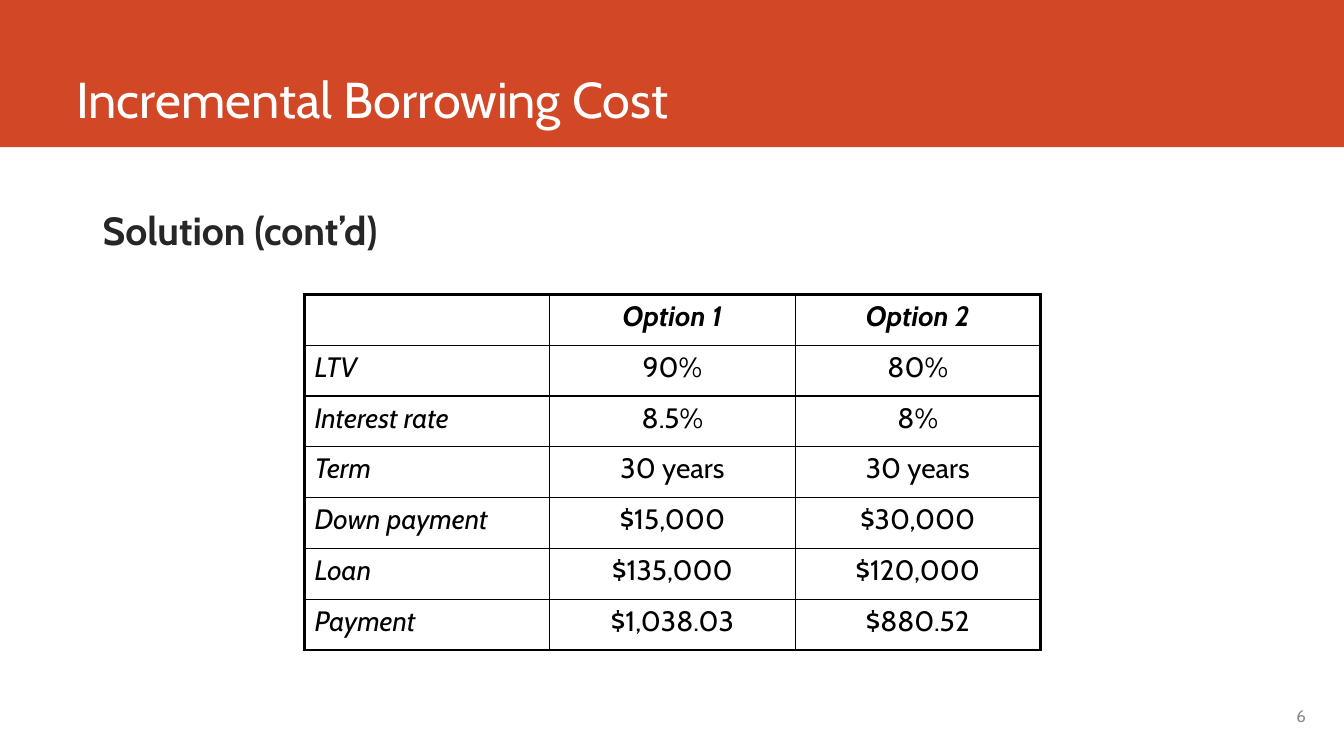
from dataclasses import dataclass

from lxml import etree
from pptx import Presentation
from pptx import util as u
from pptx.dml.color import RGBColor
from pptx.enum import shapes, text
from pptx.oxml.ns import qn

FONT = "Cabin"
BLACK = "000000"
THIN, THICK = 1, 2.25
ROW_HEIGHT = 3.53 / 7
COLUMN_WIDTH = 7.3 / 3

LOAN_ROWS = [
    ("", "Option 1", "Option 2"),
    ("LTV", "90%", "80%"),
    ("Interest rate", "8.5%", "8%"),
    ("Term", "30 years", "30 years"),
    ("Down payment", "$15,000", "$30,000"),
    ("Loan", "$135,000", "$120,000"),
    ("Payment", "$1,038.03", "$880.52"),
]


@dataclass
class Style:
    size: float
    color: str
    bold: bool = False
    italic: bool = False
    align: text.PP_ALIGN = text.PP_ALIGN.LEFT
    before: float = 0
    after: float = 0


@dataclass
class Label:
    words: str
    left: float
    top: float
    width: float
    height: float
    anchor: text.MSO_ANCHOR
    style: Style


LABELS = [
    Label("Incremental Borrowing Cost", 0.66, 0, 11.76, 1.32,
          text.MSO_ANCHOR.BOTTOM, Style(36, "FFFFFF")),
    Label("Solution (cont’d)", 0.92, 2, 11.5, 4.82,
          text.MSO_ANCHOR.TOP, Style(28, "262626", bold=True, before=6, after=6)),
    Label("6", 9.47, 6.9, 3.58, 0.4,
          text.MSO_ANCHOR.MIDDLE, Style(12, "8C8C8C", align=text.PP_ALIGN.RIGHT)),
]


def rgb(color: str) -> RGBColor:
    return RGBColor.from_string(color)


def write(frame, words: str, style: Style) -> None:
    paragraph = frame.paragraphs[0]
    paragraph.alignment = style.align
    paragraph.space_before = u.Pt(style.before)
    paragraph.space_after = u.Pt(style.after)
    run = paragraph.add_run()
    run.text = words
    run.font.name = FONT
    run.font.size = u.Pt(style.size)
    run.font.bold = style.bold
    run.font.italic = style.italic
    run.font.color.rgb = rgb(style.color)


def add_banner(slide) -> None:
    banner = slide.shapes.add_shape(
        shapes.MSO_SHAPE.RECTANGLE, 0, 0, u.Inches(13.33), u.Inches(1.46))
    banner.shadow.inherit = False
    banner.fill.solid()
    banner.fill.fore_color.rgb = rgb("D24726")
    banner.line.fill.background()


def add_label(slide, label: Label) -> None:
    box = slide.shapes.add_textbox(
        u.Inches(label.left), u.Inches(label.top),
        u.Inches(label.width), u.Inches(label.height))
    box.text_frame.word_wrap = True
    box.text_frame.vertical_anchor = label.anchor
    write(box.text_frame, label.words, label.style)


def add_border(cell, side: str, width: float) -> None:
    properties = cell._tc.get_or_add_tcPr()
    line = etree.SubElement(properties, qn(f"a:ln{side}"), w=str(u.Pt(width)))
    fill = etree.SubElement(line, qn("a:solidFill"))
    etree.SubElement(fill, qn("a:srgbClr"), val=BLACK)


def add_loan_table(slide) -> None:
    row_count, column_count = len(LOAN_ROWS), len(LOAN_ROWS[0])
    table = slide.shapes.add_table(
        row_count, column_count, u.Inches(3.02), u.Inches(2.92),
        u.Inches(COLUMN_WIDTH * column_count),
        u.Inches(ROW_HEIGHT * row_count)).table
    table.first_row = table.horz_banding = False
    for row, values in enumerate(LOAN_ROWS):
        for column, value in enumerate(values):
            cell = table.cell(row, column)
            outer_sides = {
                "L": column == 0,
                "R": column == column_count - 1,
                "T": row == 0,
                "B": row == row_count - 1,
            }
            for side, is_outer in outer_sides.items():
                add_border(cell, side, THICK if is_outer else THIN)
            cell.fill.background()
            if value:
                align = text.PP_ALIGN.CENTER if column else text.PP_ALIGN.LEFT
                write(cell.text_frame, value, Style(
                    20, BLACK, bold=row == 0, italic=row == 0 or column == 0,
                    align=align, before=4))


def main() -> None:
    presentation = Presentation()
    presentation.slide_width = u.Inches(13.33)
    presentation.slide_height = u.Inches(7.5)
    slide = presentation.slides.add_slide(presentation.slide_layouts[6])
    add_banner(slide)
    for label in LABELS:
        add_label(slide, label)
    add_loan_table(slide)
    presentation.save("out.pptx")


if __name__ == "__main__":
    main()
